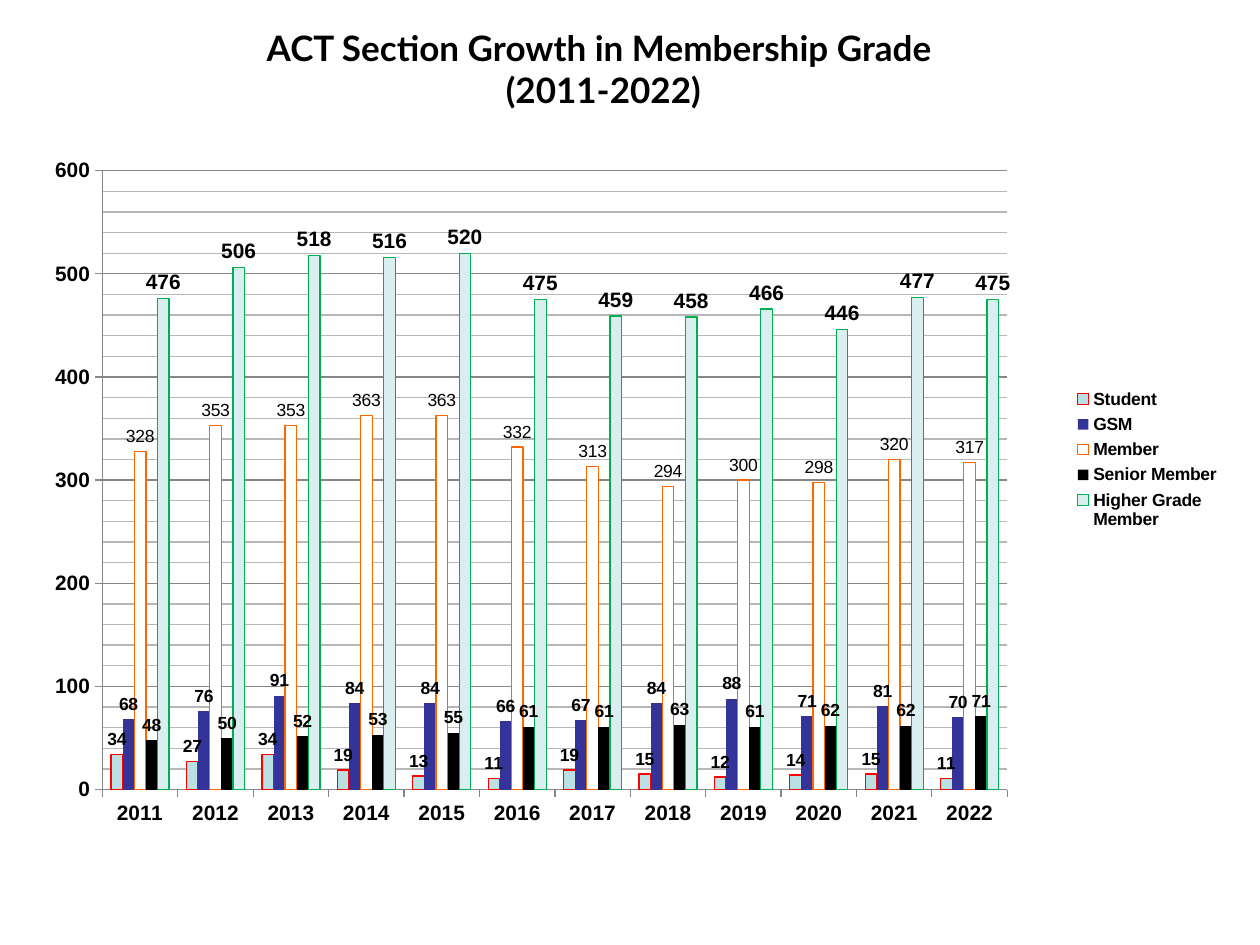
from copy import deepcopy
from dataclasses import dataclass
from typing import Any, Optional

from lxml import etree
from pptx import Presentation
from pptx.chart.data import CategoryChartData
from pptx.dml.color import RGBColor
from pptx.enum.chart import (XL_CHART_TYPE, XL_LABEL_POSITION,
                             XL_LEGEND_POSITION, XL_TICK_MARK)
from pptx.enum.text import MSO_ANCHOR, PP_ALIGN
from pptx.oxml.ns import qn
from pptx.util import Cm, Pt

COLUMNS = XL_CHART_TYPE.COLUMN_CLUSTERED
OUT_END = XL_LABEL_POSITION.OUTSIDE_END
RIGHT = XL_LEGEND_POSITION.RIGHT
TICK_OUT, TICK_NONE = XL_TICK_MARK.OUTSIDE, XL_TICK_MARK.NONE
MIDDLE, CENTER = MSO_ANCHOR.MIDDLE, PP_ALIGN.CENTER


@dataclass(frozen=True)
class Theme:
    head: str = "Lato"
    body: str = "Arial"
    ink: str = "000000"
    axis: str = "868686"
    minor: str = "B7B7B7"
    title: float = 20
    large: float = 11.9
    small: float = 10


@dataclass(frozen=True)
class Grade:
    name: str
    vals: tuple[int, ...]
    fill: str
    edge: Optional[str] = None
    size: float = 10
    bold: bool = True


THEME = Theme()
YEARS = [str(year) for year in range(2011, 2023)]
GRADES = [
    Grade("Student", (34, 27, 34, 19, 13, 11, 19, 15, 12, 14, 15, 11),
          "BBE0E3", "FF0000"),
    Grade("GSM", (68, 76, 91, 84, 84, 66, 67, 84, 88, 71, 81, 70), "333399"),
    Grade("Member", (328, 353, 353, 363, 363, 332, 313, 294, 300, 298, 320, 317),
          "FFFFFF", "FF6600", bold=False),
    Grade("Senior Member", (48, 50, 52, 53, 55, 61, 61, 63, 61, 62, 62, 71),
          "000000"),
    Grade("Higher Grade Member",
          (476, 506, 518, 516, 520, 475, 459, 458, 466, 446, 477, 475),
          "DAEDEF", "00B050", THEME.large),
]


def apply(thing: Any, **vals: Any) -> None:
    for key, val in vals.items():
        setattr(thing, key, val)


def style(font: Any, size: float, bold: bool = True,
          face: str = THEME.body) -> None:
    apply(font, name=face, size=Pt(size), bold=bold)
    font.color.rgb = RGBColor.from_string(THEME.ink)


def stroke(line: Any, color: str) -> None:
    line.color.rgb = RGBColor.from_string(color)
    line.width = Pt(0.75)


def place(host: Any, index: int, frame: tuple[float, ...],
          inner: bool = False) -> None:
    """Give a chart part a fixed place, in fractions of the chart."""
    for old in host.findall(qn("c:layout")):
        host.remove(old)
    layout = etree.Element(qn("c:layout"))
    manual = etree.SubElement(layout, qn("c:manualLayout"))
    parts = [("layoutTarget", "inner")] if inner else []
    parts += [("xMode", "edge"), ("yMode", "edge"), *zip("xywh", frame)]
    for tag, val in parts:
        etree.SubElement(manual, qn(f"c:{tag}")).set("val", str(val))
    host.insert(index, layout)


def draw_title(slide: Any) -> None:
    box = slide.shapes.add_textbox(Cm(1.27), Cm(0.46), Cm(21.79), Cm(1.85))
    apply(box.text_frame, word_wrap=True, vertical_anchor=MIDDLE)
    para = box.text_frame.paragraphs[0]
    para.text = "ACT Section Growth in Membership Grade \v(2011-2022)"
    para.alignment = CENTER
    for run in para.runs:
        style(run.font, THEME.title, face=THEME.head)


def draw_grade(series: Any, grade: Grade) -> None:
    series.format.fill.solid()
    series.format.fill.fore_color.rgb = RGBColor.from_string(grade.fill)
    series.invert_if_negative = False
    if grade.edge:
        stroke(series.format.line, grade.edge)
    else:
        series.format.line.fill.background()
    labels = series.data_labels
    apply(labels, show_value=True, position=OUT_END)
    style(labels.font, grade.size, grade.bold)


def draw_grid(scale: Any) -> None:
    """Style the major lines, then give the minor ones a lighter copy."""
    apply(scale, has_major_gridlines=True, has_minor_gridlines=True)
    stroke(scale.major_gridlines.format.line, THEME.axis)
    major, minor = (scale._element.find(qn(f"c:{kind}Gridlines"))
                    for kind in ("major", "minor"))
    look = deepcopy(major.find(qn("c:spPr")))
    for color in look.iter(qn("a:srgbClr")):
        color.set("val", THEME.minor)
    minor.append(look)


def draw_chart(slide: Any) -> None:
    data = CategoryChartData()
    data.categories = YEARS
    for grade in GRADES:
        data.add_series(grade.name, grade.vals)
    chart = slide.shapes.add_chart(COLUMNS, Cm(0.81), Cm(2.54), Cm(24.13),
                                   Cm(15.29), data).chart
    apply(chart, has_title=False, has_legend=True)
    style(chart.font, 17.9, False)

    # Columns
    plot = chart.plots[0]
    apply(plot, gap_width=150, overlap=0, vary_by_categories=False)
    for series, grade in zip(plot.series, GRADES):
        draw_grade(series, grade)
    place(chart._chartSpace.chart.plotArea, 0,
          (0.052, 0.059, 0.756, 0.816), inner=True)

    # Axes and grid
    for axis in (chart.category_axis, chart.value_axis):
        apply(axis, major_tick_mark=TICK_OUT, minor_tick_mark=TICK_NONE)
        style(axis.tick_labels.font, THEME.large)
        stroke(axis.format.line, THEME.axis)
    scale = chart.value_axis
    apply(scale, minimum_scale=0, maximum_scale=600, major_unit=100,
          minor_unit=20)
    draw_grid(scale)

    # Legend
    apply(chart.legend, position=RIGHT, include_in_layout=False)
    style(chart.legend.font, THEME.small)
    place(chart.legend._element, 1, (0.86, 0.34, 0.13, 0.2))


def main() -> None:
    deck = Presentation()
    apply(deck, slide_width=Cm(25.4), slide_height=Cm(19.05))
    slide = deck.slides.add_slide(deck.slide_layouts[6])
    draw_title(slide)
    draw_chart(slide)
    deck.save("out.pptx")


if __name__ == "__main__":
    main()
